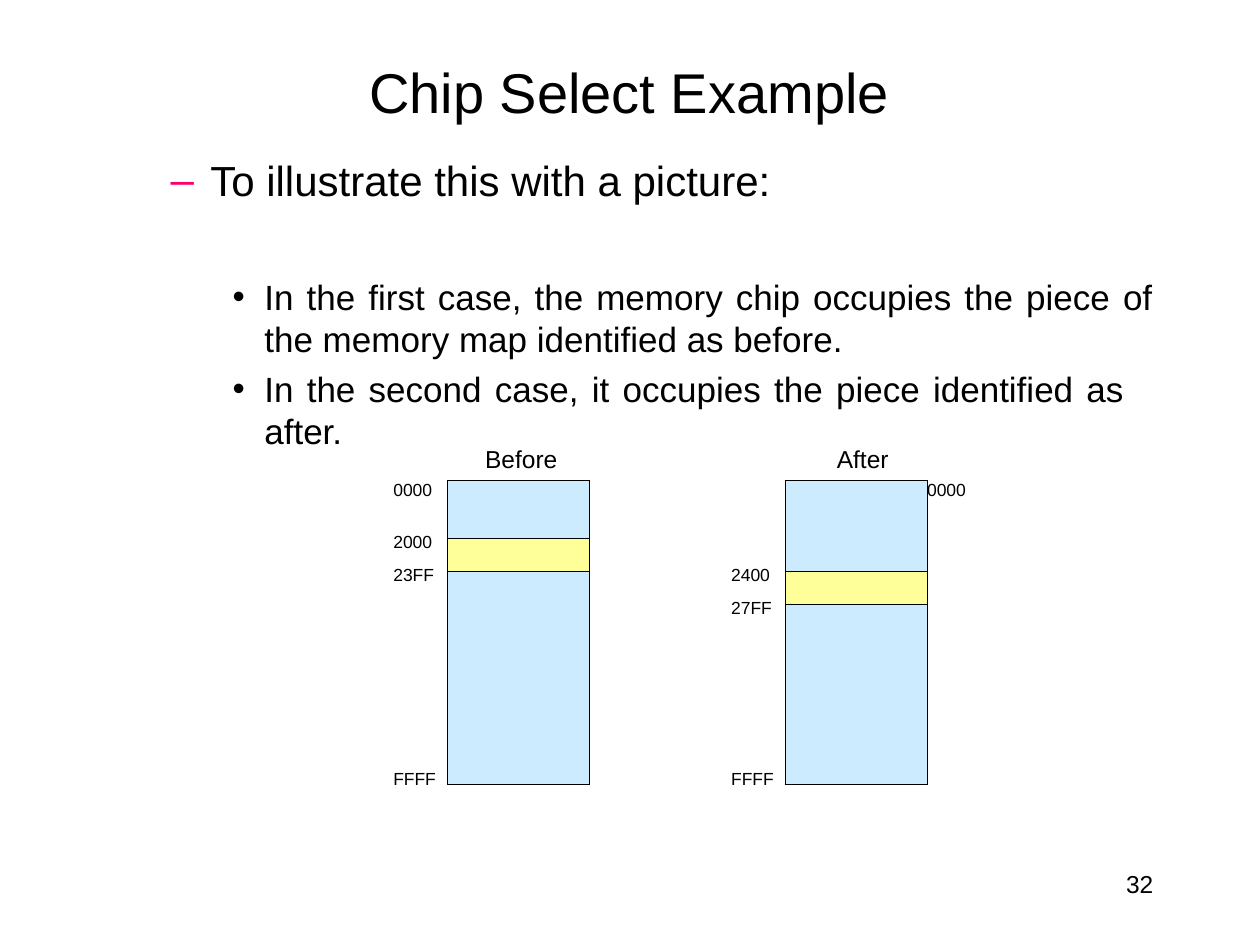
from pptx import Presentation
from pptx.dml.color import RGBColor
from pptx.enum.text import PP_ALIGN
from pptx.oxml.ns import qn
from pptx.util import Cm, Pt
from lxml.etree import SubElement

THEME = {
    "font": "Arial", "text": "000000", "dash": "FF0066",
    "memory": "CCEBFF", "chip": "FFFF99", "border": "000000",
    "title": 32, "lead": 24, "bullet": 20, "caption": 14, "address": 10,
}

TITLE = "Chip Select Example"
PAGE = "32"
BODY = [
    dict(text="To illustrate this with a picture:", size="lead", mark="–",
         color="dash", indent=0.84, hang=0.8, align=PP_ALIGN.LEFT),
    dict(text="In the first case, the memory chip occupies the piece of the memory map identified as before.",
         size="bullet", mark="•", color="text", indent=1.93, hang=0.64,
         before=40, line=24, align=PP_ALIGN.JUSTIFY),
    dict(text="In the second case, it occupies the piece identified as after.",
         size="bullet", mark="•", color="text", indent=1.93, hang=0.64,
         before=5, line=24, right=0.58, align=PP_ALIGN.JUSTIFY),
]
MAPS = [
    dict(name="Before", left=9.02, name_left=9.78, above=1.17,
         addresses=("0000", "2000", "23FF", "FFFF"), zero_right=False),
    dict(name="After", left=15.83, name_left=16.87, above=1.83,
         addresses=("0000", "2400", "27FF", "FFFF"), zero_right=True),
]
MAP_TOP, MAP_W, MAP_H, CHIP_H = 9.69, 2.86, 6.13, 0.66
LABEL_W, LABEL_H = 1.09, 0.45
LABEL_SHIFTS = (-0.03, -0.15, -0.15, -0.33)


def add_box(s, left, top, width, height):
    tf = s.shapes.add_textbox(Cm(left), Cm(top), Cm(width), Cm(height)).text_frame
    tf.word_wrap = True
    tf.margin_left = tf.margin_top = tf.margin_right = tf.margin_bottom = 0
    return tf


def add_text(p, text, size, align=PP_ALIGN.LEFT):
    p.alignment = align
    r = p.add_run()
    r.text = text
    r.font.name = THEME["font"]
    r.font.size = Pt(THEME[size])
    r.font.color.rgb = RGBColor.from_string(THEME["text"])


def add_label(s, text, size, left, top, width, height, align=PP_ALIGN.LEFT):
    add_text(add_box(s, left, top, width, height).paragraphs[0], text, size, align)


def set_bullet(p, item):
    pPr = p._p.get_or_add_pPr()
    pPr.set("marL", str(Cm(item["indent"])))
    pPr.set("indent", str(-Cm(item["hang"])))
    pPr.set("marR", str(Cm(item.get("right", 0))))
    color = SubElement(pPr, qn("a:buClr"))
    SubElement(color, qn("a:srgbClr"), val=THEME[item["color"]])
    SubElement(pPr, qn("a:buFont"), typeface=THEME["font"])
    SubElement(pPr, qn("a:buChar"), char=item["mark"])


def add_body(s):
    tf = add_box(s, 3.4, 3.12, 19.85, 8.2)
    for i, item in enumerate(BODY):
        p = tf.paragraphs[0] if i == 0 else tf.add_paragraph()
        set_bullet(p, item)
        if "before" in item:
            p.space_before = Pt(item["before"])
            p.line_spacing = Pt(item["line"])
        add_text(p, item["text"], item["size"], item["align"])


def style_cell(cell, fill):
    cell.margin_left = cell.margin_top = cell.margin_right = cell.margin_bottom = 0
    SubElement(cell.text_frame.paragraphs[0]._p, qn("a:endParaRPr"), sz="800")
    tcPr = cell._tc.get_or_add_tcPr()
    for side in ("lnL", "lnR", "lnT", "lnB"):
        ln = SubElement(tcPr, qn("a:" + side), w=str(Pt(0.72)))
        SubElement(SubElement(ln, qn("a:solidFill")), qn("a:srgbClr"), val=THEME["border"])
    cell.fill.solid()
    cell.fill.fore_color.rgb = RGBColor.from_string(THEME[fill])


def add_map(s, m):
    heights = (m["above"], CHIP_H, MAP_H - m["above"] - CHIP_H)
    table = s.shapes.add_table(3, 1, Cm(m["left"]), Cm(MAP_TOP), Cm(MAP_W), Cm(MAP_H)).table
    table.first_row = table.horz_banding = False
    for i, (height, fill) in enumerate(zip(heights, ("memory", "chip", "memory"))):
        table.rows[i].height = Cm(height)
        style_cell(table.cell(i, 0), fill)

    add_label(s, m["name"], "caption", m["name_left"], 8.95, 2, 0.6)
    for i, (address, shift) in enumerate(zip(m["addresses"], LABEL_SHIFTS)):
        on_right = i == 0 and m["zero_right"]
        left = m["left"] + (MAP_W if on_right else -LABEL_W)
        top = MAP_TOP + sum(heights[:i]) + shift
        add_label(s, address, "address", left, top, LABEL_W, LABEL_H)


def main():
    prs = Presentation()
    prs.slide_width, prs.slide_height = Cm(25.4), Cm(19.05)
    s = prs.slides.add_slide(prs.slide_layouts[6])
    add_label(s, TITLE, "title", 2.44, 1.17, 20.5, 1.37, PP_ALIGN.CENTER)
    add_body(s)
    for m in MAPS:
        add_map(s, m)
    add_label(s, PAGE, "caption", 22.7, 17.52, 0.7, 0.63)
    prs.save("out.pptx")


if __name__ == "__main__":
    main()
